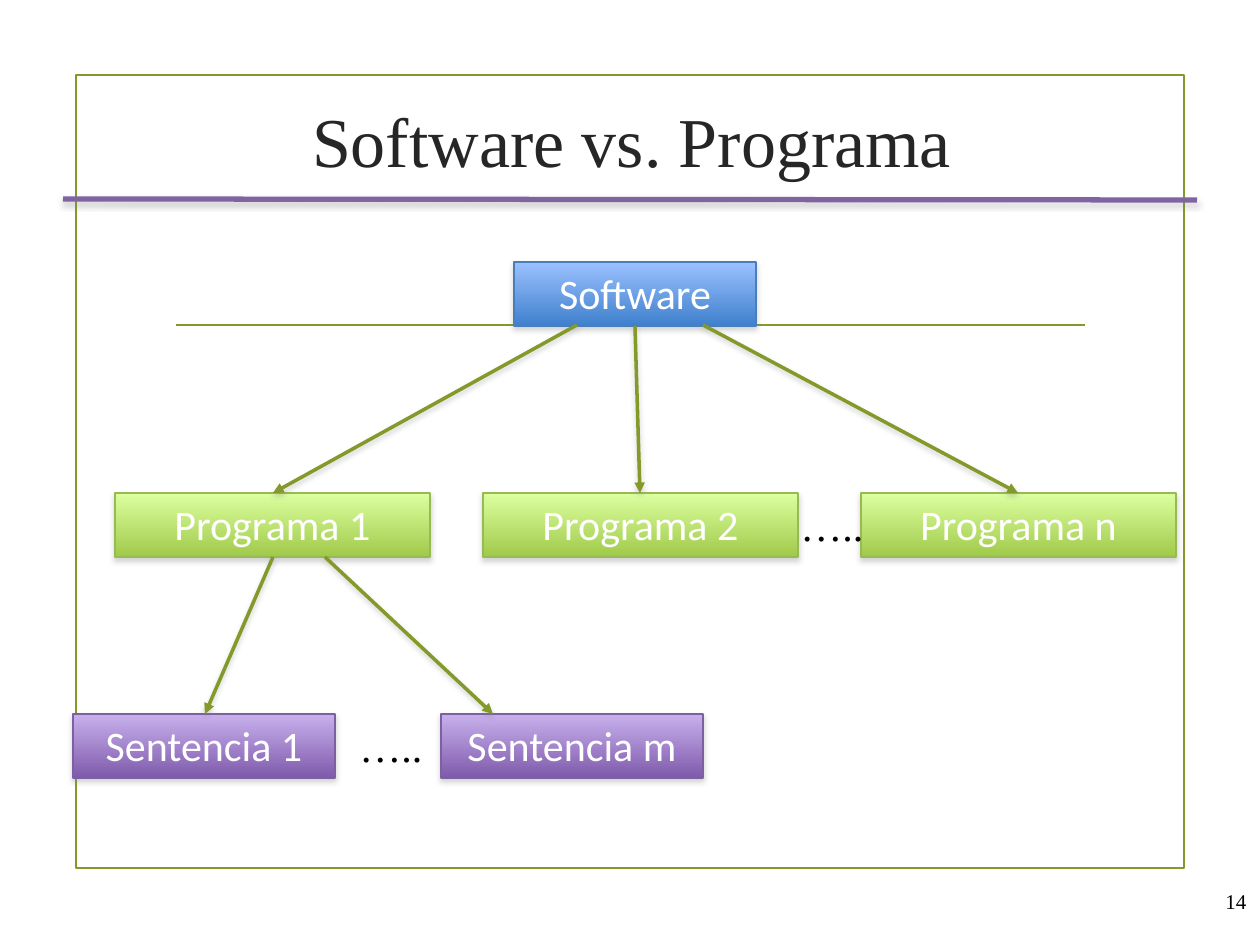
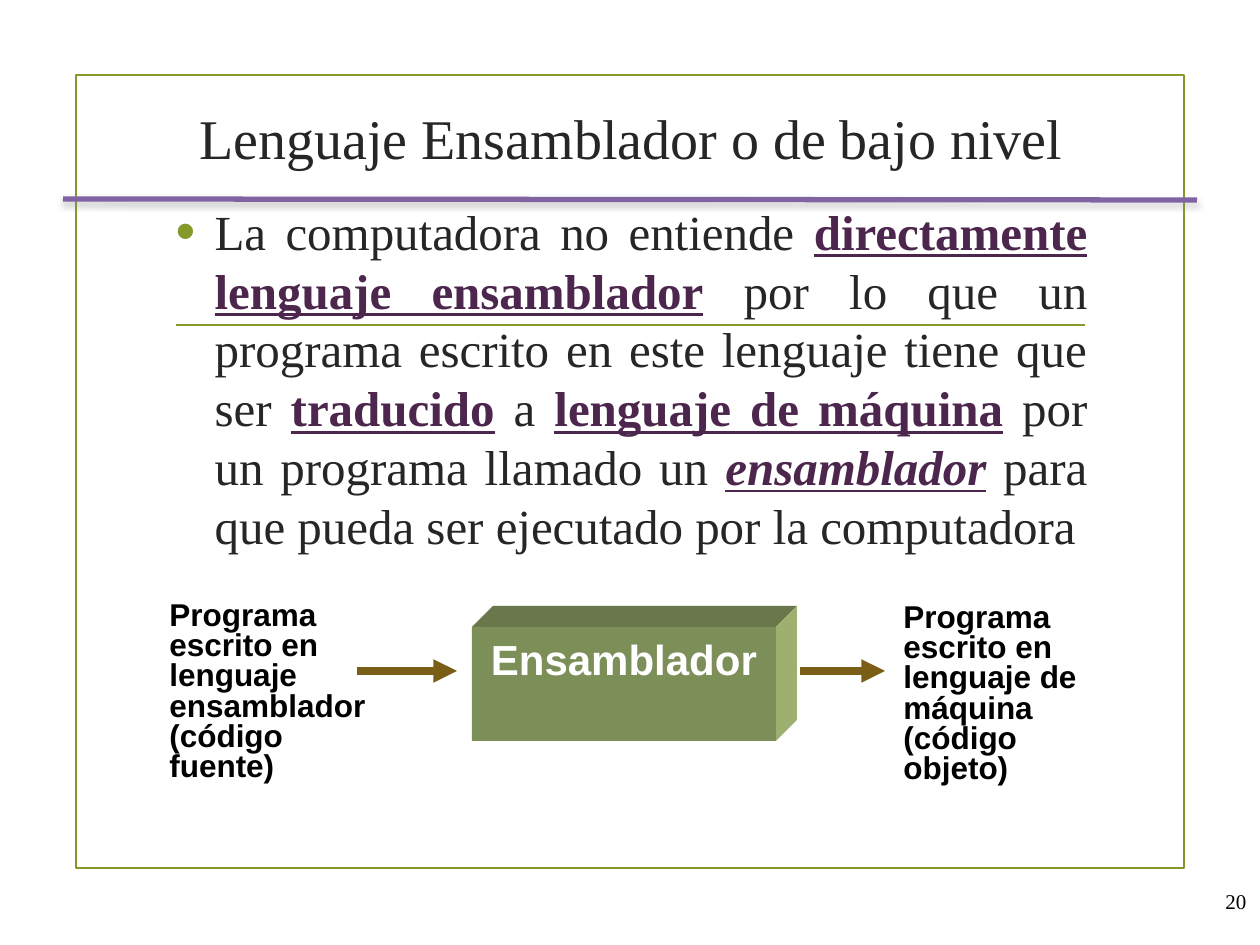
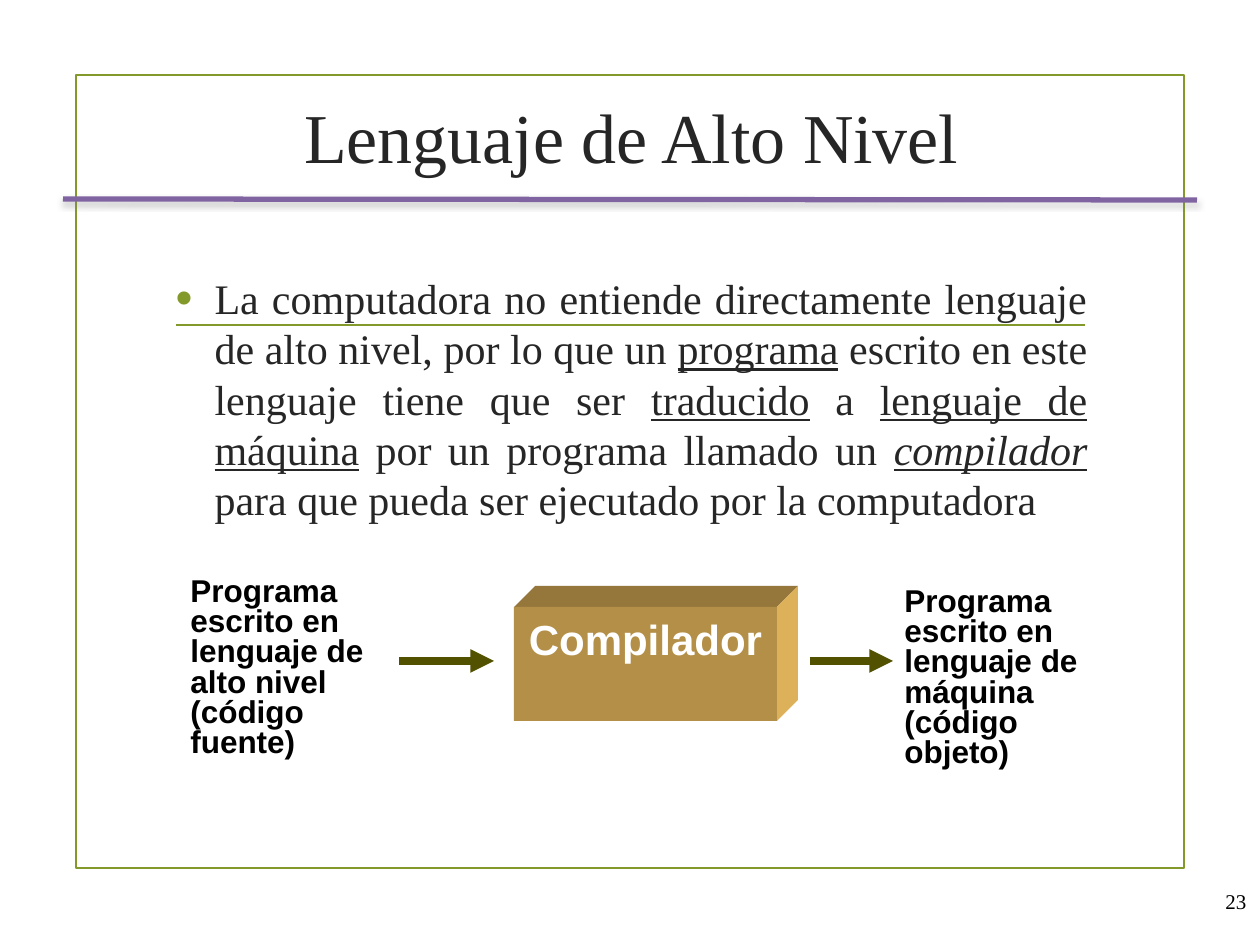
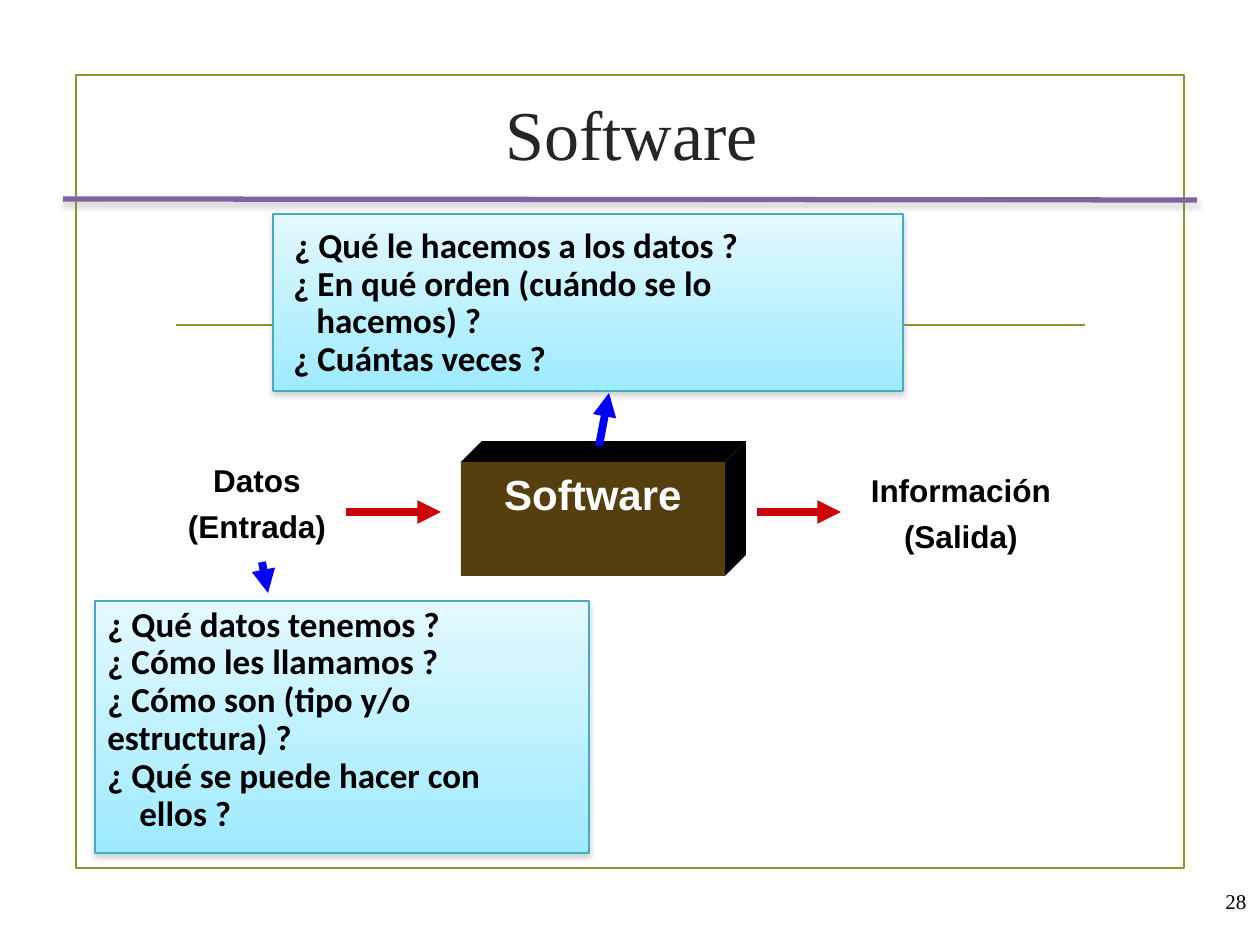
from dataclasses import dataclass

from lxml import etree
from pptx import Presentation
from pptx.dml.color import RGBColor
from pptx.enum.dml import MSO_LINE
from pptx.enum.shapes import MSO_CONNECTOR, MSO_SHAPE
from pptx.enum.text import MSO_ANCHOR, MSO_AUTO_SIZE, PP_ALIGN
from pptx.oxml.ns import qn
from pptx.util import Emu, Inches, Pt

RECT = MSO_SHAPE.RECTANGLE
LINE = MSO_CONNECTOR.STRAIGHT
DASH = MSO_LINE.DASH
TOP, MIDDLE = MSO_ANCHOR.TOP, MSO_ANCHOR.MIDDLE
LEFT, CENTER, JUSTIFY = PP_ALIGN.LEFT, PP_ALIGN.CENTER, PP_ALIGN.JUSTIFY
FIXED = MSO_AUTO_SIZE.NONE
UNIT = 914400 / 126


@dataclass(frozen=True)
class Type:
    face: str
    size: int
    color: str
    bold: bool = False
    align: object = LEFT
    pitch: float = 1.0
    gap: int = 0


@dataclass(frozen=True)
class Paint:
    top: str
    base: str
    edge: str


@dataclass(frozen=True)
class Block:
    front: str
    roof: str
    side: str


class Theme:
    olive = "83992A"
    purple = "8064A2"
    accent = "4D264D"
    shade = "808080"
    brown, moss, red, blue = "7A5E15", "525100", "CE040C", "0000FF"

    title = Type("Times New Roman", 40, "262626", align=CENTER)
    long = Type("Times New Roman", 32, "262626", align=CENTER)
    body = Type("Times New Roman", 24, "262626", align=JUSTIFY)
    large = Type("Times New Roman", 28, "262626", align=JUSTIFY)
    number = Type("Times New Roman", 12, "000000")
    dots = Type("Times New Roman", 24, "000000")
    node = Type("Calibri", 24, "FFFFFF", align=CENTER)
    panel = Type("Calibri", 20, "000000", True, pitch=0.9)
    label = Type("Arial", 18, "000000", True, pitch=0.8)
    port = Type("Arial", 18, "000000", True, CENTER, 0.8, 9)
    block = Type("Arial", 24, "FFFFFF", True, CENTER)

    root = Paint("9BC1FF", "3F80CD", "4A7EBB")
    branch = Paint("DCFFA0", "A0CA4A", "98B954")
    leaf = Paint("C8B0ED", "7F5BAB", "7D60A0")
    sky = Paint("E4F9FF", "9EEAFF", "46AAC5")

    green = Block("7D8F59", "69774A", "9DB06F")
    gold = Block("B38F47", "95773B", "DDB159")
    dark = Block("553F0E", "000000", "000000")


def px(n):
    return Emu(round(n * UNIT))


def rgb(code):
    return RGBColor.from_string(code)


def child(node, tag, **attrs):
    return etree.SubElement(node, qn(tag), attrs)


class Deck:
    def __init__(self, theme):
        self.theme = theme
        self.prs = Presentation()
        self.prs.slide_width = Inches(10)
        self.prs.slide_height = Inches(7.5)
        self.slide = None

    def start(self, title, number, top, height, kind, body=False):
        layout = self.prs.slide_layouts[1 if body else 5]
        self.slide = self.prs.slides.add_slide(layout)
        if len(self.prs.slides) == 1:
            self.frame()
        shape = self.slide.shapes.title
        self.place(shape, 163, top, 937, height)
        self.set_text(shape.text_frame, [title], kind, MIDDLE)
        self.text(1213, 882, 47, 38, [number], self.theme.number, wrap=False)

    def frame(self):
        """Draw the common frame and move it to the slide master."""
        box = self.slide.shapes.add_shape(RECT, px(76), px(75), px(1108), px(793))
        box.fill.background()
        box.shadow.inherit = False
        box.line.color.rgb = rgb(self.theme.olive)
        box.line.width = Pt(1.25)
        bar = self.line((63, 199), (1197, 200), self.theme.purple, 3, shadow=True)
        rule = self.line((176, 325), (1085, 325), self.theme.olive, 1.25)
        for part in (box, bar, rule):
            self.prs.slide_master.shapes.element.append(part.element)

    def place(self, shape, x, y, w, h):
        shape.left, shape.top, shape.width, shape.height = map(px, (x, y, w, h))

    def style(self, par, kind):
        par.alignment = kind.align
        par.line_spacing = kind.pitch
        par.space_before = Pt(0)
        font = par.font
        font.name, font.size, font.bold = kind.face, Pt(kind.size), kind.bold
        font.color.rgb = rgb(kind.color)

    def set_text(self, frame, rows, kind, anchor=TOP, wrap=True):
        """Fill a frame; a row is a text or an (indent, text) pair."""
        frame.auto_size = FIXED
        frame.word_wrap = wrap
        frame.vertical_anchor = anchor
        for i, row in enumerate(rows):
            indent, text = row if isinstance(row, tuple) else (0, row)
            par = frame.add_paragraph() if i else frame.paragraphs[0]
            par.add_run().text = text
            if indent:
                par._p.get_or_add_pPr().set("marL", str(px(indent)))
            self.style(par, kind)
            if i:
                par.space_before = Pt(kind.gap)

    def text(self, x, y, w, h, rows, kind, wrap=True):
        box = self.slide.shapes.add_textbox(px(x), px(y), px(w), px(h))
        self.set_text(box.text_frame, rows, kind, wrap=wrap)

    def bullet(self, top, runs, kind):
        """Fill the body with one bullet; marks are b, i and u."""
        shape = self.slide.placeholders[1]
        self.place(shape, 163, top, 937, 475)
        frame = shape.text_frame
        frame.auto_size = FIXED
        par = frame.paragraphs[0]
        props = par._p.get_or_add_pPr()
        props.set("marL", str(px(39)))
        props.set("indent", str(px(-39)))
        child(child(props, "a:buClr"), "a:srgbClr", val=self.theme.olive)
        child(props, "a:buSzPct", val="115000")
        child(props, "a:buFont", typeface="Arial")
        child(props, "a:buChar", char="•")
        self.style(par, kind)
        par.space_after = Pt(6)
        for text, marks in runs:
            run = par.add_run()
            run.text = text
            if "b" in marks:
                run.font.bold = True
                run.font.color.rgb = rgb(self.theme.accent)
            if "i" in marks:
                run.font.italic = True
            if "u" in marks:
                run.font.underline = True

    def shade(self, effects):
        shadow = child(effects, "a:outerShdw", blurRad="40000", dist="23000",
                       dir="5400000", rotWithShape="0")
        color = child(shadow, "a:srgbClr", val=self.theme.shade)
        child(color, "a:alpha", val="35000")

    def line(self, start, end, color, width, head=False, shadow=False, dash=None):
        line = self.slide.shapes.add_connector(LINE, *map(px, start + end))
        line.line.color.rgb = rgb(color)
        line.line.width = Pt(width)
        if dash:
            line.line.dash_style = dash
        props = line.element.spPr
        if head:
            child(props.find(qn("a:ln")), "a:tailEnd", type="triangle")
        effects = child(props, "a:effectLst")
        if shadow:
            self.shade(effects)
        return line

    def arrow(self, start, end, color, dash=None):
        self.line(start, end, color, 4.5, head=True, dash=dash)

    def link(self, start, end):
        self.line(start, end, self.theme.olive, 2, head=True, shadow=True)

    def card(self, x, y, w, h, rows, paint, kind, inset=6):
        card = self.slide.shapes.add_shape(RECT, px(x), px(y), px(w), px(h))
        card.fill.gradient()
        card.fill.gradient_angle = 270
        for stop, code in zip(card.fill.gradient_stops, (paint.top, paint.base)):
            stop.color.rgb = rgb(code)
        card.line.color.rgb = rgb(paint.edge)
        card.line.width = Pt(0.75)
        card.shadow.inherit = False
        self.shade(card.element.spPr.find(qn("a:effectLst")))
        self.set_text(card.text_frame, rows, kind)
        card.text_frame.margin_top = px(inset)

    def paint(self, shape, color):
        shape.shadow.inherit = False
        shape.fill.solid()
        shape.fill.fore_color.rgb = rgb(color)
        shape.line.fill.background()

    def block(self, x, y, w, text, look):
        """Draw a solid box with a front, a roof and a right side."""
        h, d = 114, 21
        right, low = x + w, y + h
        faces = (
            (look.roof, [(x, y), (x + d, y - d), (right + d, y - d), (right, y)]),
            (look.side, [(right, y), (right + d, y - d),
                         (right + d, low - d), (right, low)]),
        )
        for color, points in faces:
            pen = self.slide.shapes.build_freeform(*points[0], scale=UNIT)
            pen.add_line_segments(points[1:], close=True)
            self.paint(pen.convert_to_shape(), color)
        front = self.slide.shapes.add_shape(RECT, px(x), px(y), px(w), px(h))
        self.paint(front, look.front)
        self.set_text(front.text_frame, [text], self.theme.block)


def tree(deck):
    theme = deck.theme
    deck.start("Software vs. Programa", "14", 76, 127, theme.title)
    deck.card(514, 262, 242, 64, ["Software"], theme.root, theme.node)
    for x, name in ((115, "1"), (483, "2"), (861, "n")):
        deck.card(x, 493, 315, 64, [f"Programa {name}"], theme.branch, theme.node)
    for start, end in (((703, 325), (1018, 493)), ((635, 326), (640, 493)),
                       ((577, 325), (273, 493))):
        deck.link(start, end)
    for x, name in ((73, "1"), (441, "m")):
        deck.card(x, 714, 262, 64, [f"Sentencia {name}"], theme.leaf, theme.node)
    deck.link((325, 557), (493, 714))
    deck.link((273, 557), (205, 714))
    for x, y in ((788, 493), (347, 714)):
        deck.text(x, y, 89, 64, ["….."], theme.dots, wrap=False)


def low(deck):
    theme = deck.theme
    deck.start("Lenguaje Ensamblador o de bajo nivel", "20", 76, 123,
               theme.long, body=True)
    deck.bullet(195, (
        ("La computadora no entiende ", ""),
        ("directamente lenguaje ensamblador", "bu"),
        (" por lo que un programa escrito en este lenguaje tiene que ser ", ""),
        ("traducido", "bu"),
        (" a ", ""),
        ("lenguaje de máquina", "bu"),
        (" por un programa llamado un ", ""),
        ("ensamblador", "biu"),
        (" para que pueda ser ejecutado por la computadora", ""),
    ), theme.large)
    deck.text(157, 596, 251, 194,
              ["Programa escrito en lenguaje ensamblador (código fuente)"], theme.label)
    deck.arrow((357, 671), (457, 671), theme.brown)
    deck.text(891, 598, 243, 194,
              ["Programa escrito en lenguaje de máquina (código objeto)"], theme.label)
    deck.arrow((800, 671), (885, 671), theme.brown)
    deck.block(472, 627, 304, "Ensamblador", theme.green)


def high(deck):
    theme = deck.theme
    deck.start("Lenguaje de Alto Nivel", "23", 66, 139, theme.title, body=True)
    deck.bullet(266, (
        ("La computadora no entiende directamente lenguaje de alto nivel, "
         "por lo que un ", ""),
        ("programa", "u"),
        (" escrito en este lenguaje tiene que ser ", ""),
        ("traducido", "u"),
        (" a ", ""),
        ("lenguaje de máquina", "u"),
        (" por un programa llamado un ", ""),
        ("compilador", "iu"),
        (" para que pueda ser ejecutado por la computadora", ""),
    ), theme.body)
    deck.block(514, 607, 263, "Compilador", theme.gold)
    deck.text(178, 572, 242, 194,
              ["Programa escrito en lenguaje de alto nivel (código fuente)"], theme.label)
    deck.arrow((399, 661), (494, 661), theme.moss)
    deck.text(892, 582, 242, 194,
              ["Programa escrito en lenguaje de máquina (código objeto)"], theme.label)
    deck.arrow((810, 661), (893, 661), theme.moss)


def flow(deck):
    theme = deck.theme
    deck.start("Software", "28", 76, 113, theme.title)
    deck.block(461, 462, 264, "Software", theme.dark)
    deck.text(136, 462, 242, 92, ["Datos", "(Entrada)"], theme.port)
    deck.arrow((346, 512), (441, 512), theme.red)
    deck.text(840, 472, 242, 92, ["Información", "(Salida)"], theme.port)
    deck.arrow((757, 512), (841, 512), theme.red)
    deck.card(95, 601, 494, 252, [
        "¿ Qué datos tenemos ?",
        "¿ Cómo les llamamos ?",
        "¿ Cómo son (tipo y/o estructura) ?",
        "¿ Qué se puede hacer con",
        (32, "ellos ?"),
    ], theme.sky, theme.panel)
    deck.card(273, 214, 630, 177, [
        (9, "¿ Qué le hacemos a los datos ?"),
        (8, "¿ En qué orden (cuándo se lo"),
        (31, "hacemos) ?"),
        (8, "¿ Cuántas veces ?"),
    ], theme.sky, theme.panel, inset=14)
    deck.arrow((262, 562), (268, 593), theme.blue)
    deck.arrow((599, 446), (609, 393), theme.blue, DASH)


def main():
    deck = Deck(Theme)
    for build in (tree, low, high, flow):
        build(deck)
    deck.prs.save("out.pptx")


if __name__ == "__main__":
    main()
